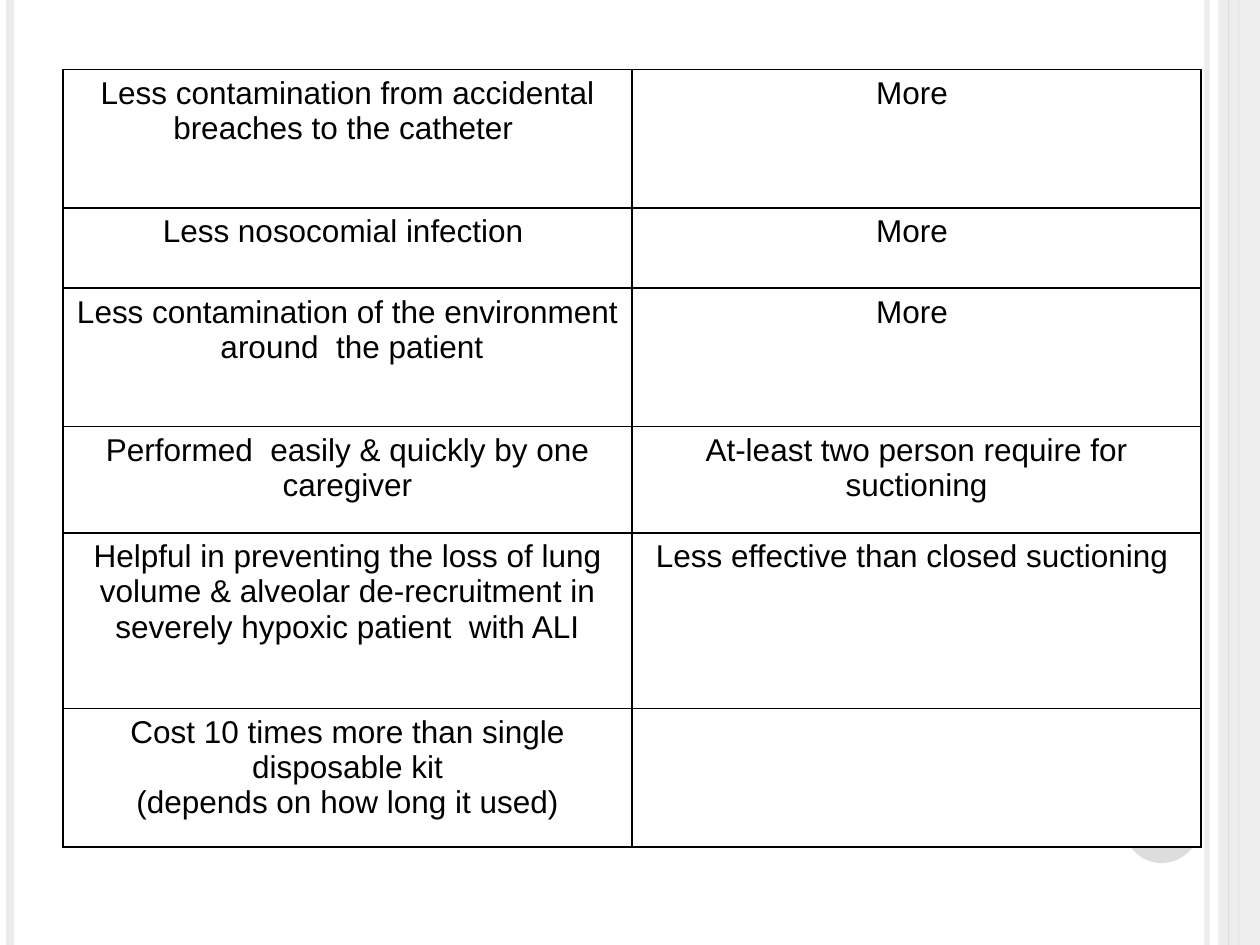
from dataclasses import dataclass

from lxml.etree import SubElement
from pptx import Presentation
from pptx.dml.color import RGBColor
from pptx.enum.shapes import MSO_CONNECTOR, MSO_SHAPE
from pptx.enum.text import PP_ALIGN
from pptx.oxml.ns import qn
from pptx.util import Cm, Pt


@dataclass(frozen=True)
class Theme:
    font: str = "Arial"
    size: float = 18
    text: str = "000000"
    border: str = "000000"
    border_pt: float = 1
    cell: str = "FFFFFF"
    pale: str = "EBEBEB"
    grey: str = "DDDDDD"


@dataclass(frozen=True)
class Rule:
    x: float
    color: str
    width: float
    opacity: int = 100


@dataclass(frozen=True)
class Row:
    height: float
    closed: tuple[str, ...]
    open: tuple[str, ...] = ()


T = Theme()
WIDTH, HEIGHT = 25.4, 19.05
BAND_LEFT = 24.56
COL_WIDTH = 11.47

OUTER_RULES = [
    Rule(24.33, T.pale, 3, 93),
    Rule(0.2, T.pale, 4.5),
    Rule(24.97, T.grey, 1.5),
]
BAND_RULE = Rule(24.77, T.grey, 0.75)

ROWS = [
    Row(2.79, ("Less contamination from accidental breaches to the catheter ",), ("More ",)),
    Row(1.62, ("Less nosocomial infection ",), ("More ",)),
    Row(2.79, ("Less contamination of the environment  around  the patient",), ("More ",)),
    Row(2.14, ("Performed  easily & quickly by one caregiver",),
        ("At-least two person require for suctioning",)),
    Row(3.54, ("Helpful in preventing the loss of lung volume & alveolar "
               "de-recruitment in severely hypoxic patient  with ALI",),
        ("Less effective than closed suctioning ",)),
    Row(2.79, ("Cost 10 times more than single disposable kit",
               "(depends on how long it used)")),
]


def set_opacity(fill_parent, percent: int) -> None:
    color = fill_parent.find(qn("a:solidFill"))[0]
    SubElement(color, qn("a:alpha"), val=str(percent * 1000))


def add_rule(s, rule: Rule) -> None:
    """Draw a vertical line over the full slide height."""
    x = Cm(rule.x)
    sp = s.shapes.add_connector(MSO_CONNECTOR.STRAIGHT, x, 0, x, Cm(HEIGHT))
    sp.line.color.rgb = RGBColor.from_string(rule.color)
    sp.line.width = Pt(rule.width)
    props = sp._element.spPr
    if rule.opacity < 100:
        set_opacity(props.find(qn("a:ln")), rule.opacity)
    SubElement(props, qn("a:effectLst"))


def add_plain(s, kind: MSO_SHAPE, box: tuple[float, ...], color: str, opacity: int = 100) -> None:
    sp = s.shapes.add_shape(kind, *map(Cm, box))
    sp.shadow.inherit = False
    sp.fill.solid()
    sp.fill.fore_color.rgb = RGBColor.from_string(color)
    sp.line.fill.background()
    if opacity < 100:
        set_opacity(sp._element.spPr, opacity)


def set_borders(cell) -> None:
    props = cell._tc.get_or_add_tcPr()
    for i, side in enumerate(("lnL", "lnR", "lnT", "lnB")):
        ln = props.makeelement(qn(f"a:{side}"), {"w": str(Pt(T.border_pt))})
        fill = SubElement(ln, qn("a:solidFill"))
        SubElement(fill, qn("a:srgbClr"), val=T.border)
        props.insert(i, ln)


def fill_cell(cell, lines: tuple[str, ...]) -> None:
    cell.fill.solid()
    cell.fill.fore_color.rgb = RGBColor.from_string(T.cell)
    set_borders(cell)
    tf = cell.text_frame
    for i, line in enumerate(lines):
        p = tf.add_paragraph() if i else tf.paragraphs[0]
        p.alignment = PP_ALIGN.CENTER
        r = p.add_run()
        r.text = line
        r.font.name = T.font
        r.font.size = Pt(T.size)
        r.font.color.rgb = RGBColor.from_string(T.text)


def add_comparison(s, rows: list[Row]) -> None:
    height = sum(row.height for row in rows)
    table = s.shapes.add_table(len(rows), 2, Cm(1.27), Cm(1.4),
                               Cm(2 * COL_WIDTH), Cm(height)).table
    table.first_row = table.horz_banding = False
    for col in table.columns:
        col.width = Cm(COL_WIDTH)
    for i, row in enumerate(rows):
        table.rows[i].height = Cm(row.height)
        for j, lines in enumerate((row.closed, row.open)):
            fill_cell(table.cell(i, j), lines)


def main() -> None:
    prs = Presentation()
    prs.slide_width, prs.slide_height = Cm(WIDTH), Cm(HEIGHT)
    s = prs.slides.add_slide(prs.slide_layouts[6])
    for rule in OUTER_RULES:
        add_rule(s, rule)
    add_plain(s, MSO_SHAPE.RECTANGLE, (BAND_LEFT, 0, WIDTH - BAND_LEFT, HEIGHT), T.pale, 87)
    add_rule(s, BAND_RULE)
    add_plain(s, MSO_SHAPE.OVAL, (22.66, 15.88, 1.52, 1.52), T.grey)
    add_comparison(s, ROWS)
    prs.save("out.pptx")


if __name__ == "__main__":
    main()
